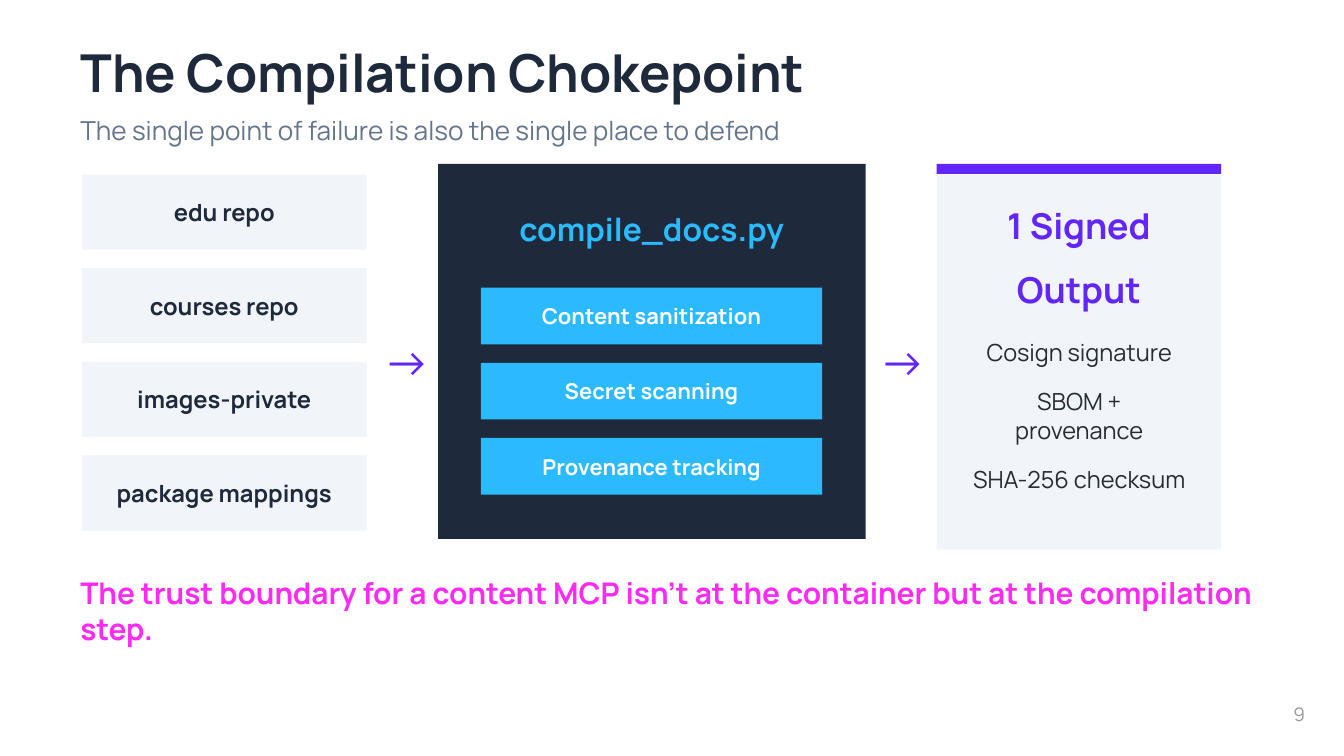
from dataclasses import dataclass

from pptx import Presentation
from pptx import util as u
from pptx.dml.color import RGBColor
from pptx.enum import shapes, text

INK = RGBColor(0x1E, 0x29, 0x3B)
SLATE = RGBColor(0x64, 0x74, 0x8B)
BODY = RGBColor(0x25, 0x2D, 0x33)
GREY = RGBColor(0x99, 0x99, 0x99)
PALE = RGBColor(0xF1, 0xF5, 0xF9)
WHITE = RGBColor(0xFF, 0xFF, 0xFF)
SKY = RGBColor(0x2B, 0xBA, 0xFD)
VIOLET = RGBColor(0x62, 0x26, 0xFB)
PINK = RGBColor(0xFD, 0x2B, 0xF2)

LEFT, CENTER, RIGHT = text.PP_ALIGN.LEFT, text.PP_ALIGN.CENTER, text.PP_ALIGN.RIGHT
TOP, MIDDLE = text.MSO_ANCHOR.TOP, text.MSO_ANCHOR.MIDDLE


@dataclass(frozen=True)
class Area:
    """A rectangle on the page, in centimetres."""
    left: float
    top: float
    width: float
    height: float

    def lengths(self) -> list[u.Length]:
        return [u.Cm(n) for n in (self.left, self.top, self.width, self.height)]


@dataclass(frozen=True)
class Stack:
    """Equal labelled bars, one below the other."""
    first: Area
    step: float
    labels: tuple[str, ...]
    fill: RGBColor
    color: RGBColor
    size: float


@dataclass(frozen=True)
class Line:
    """One centred line of the output card."""
    words: str
    area: Area
    size: float
    color: RGBColor
    bold: bool = False


REPOS = Stack(Area(1.55, 3.3, 5.38, 1.42), 1.77,
              ("edu repo", "courses repo", "images-private", "package mappings"),
              PALE, INK, 12.7)
CHECKS = Stack(Area(9.09, 5.44, 6.45, 1.07), 1.42,
               ("Content sanitization", "Secret scanning", "Provenance tracking"),
               SKY, WHITE, 11.7)
OUTPUT = (
    Line("1 Signed", Area(17.7, 3.73, 5.38, 1.09), 19.1, VIOLET, True),
    Line("Output", Area(17.7, 4.93, 5.38, 1.09), 19.1, VIOLET, True),
    Line("Cosign signature", Area(18.11, 6.25, 4.57, 0.81), 12.6, BODY),
    Line("SBOM + provenance", Area(18.11, 7.19, 4.57, 1.35), 12.6, BODY),
    Line("SHA-256 checksum", Area(18.11, 8.66, 4.57, 1.35), 12.6, BODY),
)


def write(box, words: str, *, size: float, color: RGBColor, bold: bool = False,
          align=LEFT, anchor=TOP) -> None:
    frame = box.text_frame
    frame.word_wrap = True
    frame.vertical_anchor = anchor
    frame.margin_left = frame.margin_right = u.Cm(0.25)
    frame.margin_top = frame.margin_bottom = u.Cm(0.13)
    para = frame.paragraphs[0]
    para.alignment = align
    span = para.add_run()
    span.text = words
    span.font.name = "Manrope"
    span.font.size = u.Pt(size)
    span.font.bold = bold
    span.font.color.rgb = color


def add_text(page, area: Area, words: str, **style) -> None:
    write(page.shapes.add_textbox(*area.lengths()), words, **style)


def add_block(page, area: Area, fill: RGBColor):
    block = page.shapes.add_shape(shapes.MSO_SHAPE.RECTANGLE, *area.lengths())
    block.shadow.inherit = False
    block.fill.solid()
    block.fill.fore_color.rgb = fill
    block.line.fill.background()
    return block


def add_stack(page, stack: Stack) -> None:
    first = stack.first
    for row, label in enumerate(stack.labels):
        area = Area(first.left, first.top + row * stack.step, first.width, first.height)
        write(add_block(page, area, stack.fill), label, size=stack.size,
              color=stack.color, bold=True, align=CENTER, anchor=MIDDLE)


def main() -> None:
    deck = Presentation()
    deck.slide_width, deck.slide_height = u.Cm(25.4), u.Cm(14.29)
    page = deck.slides.add_slide(deck.slide_layouts[6])

    add_text(page, Area(23.39, 12.95, 1.52, 1.09), "9", size=10, color=GREY,
             align=RIGHT, anchor=MIDDLE)
    add_text(page, Area(1.27, 0.64, 22.86, 1.45), "The Compilation Chokepoint",
             size=28, color=INK, bold=True)
    add_text(page, Area(1.27, 2.03, 22.86, 0.86),
             "The single point of failure is also the single place to defend",
             size=14, color=SLATE)

    add_stack(page, REPOS)

    add_block(page, Area(8.28, 3.1, 8.08, 7.09), INK)
    add_text(page, Area(8.28, 3.84, 8.08, 0.99), "compile_docs.py", size=17,
             color=SKY, bold=True, align=CENTER)
    add_stack(page, CHECKS)

    add_block(page, Area(17.7, 3.3, 5.38, 7.09), PALE)
    add_block(page, Area(17.7, 3.1, 5.38, 0.19), VIOLET)
    for line in OUTPUT:
        add_text(page, line.area, line.words, size=line.size, color=line.color,
                 bold=line.bold, align=CENTER)

    for left in (6.99, 16.36):
        add_text(page, Area(left, 6.15, 0.81, 1.37), "→", size=25.4, color=VIOLET)

    add_text(page, Area(1.27, 10.74, 22.86, 1.63),
             "The trust boundary for a content MCP isn't at the container "
             "but at the compilation step.", size=16, color=PINK, bold=True)
    deck.save("out.pptx")


if __name__ == "__main__":
    main()
